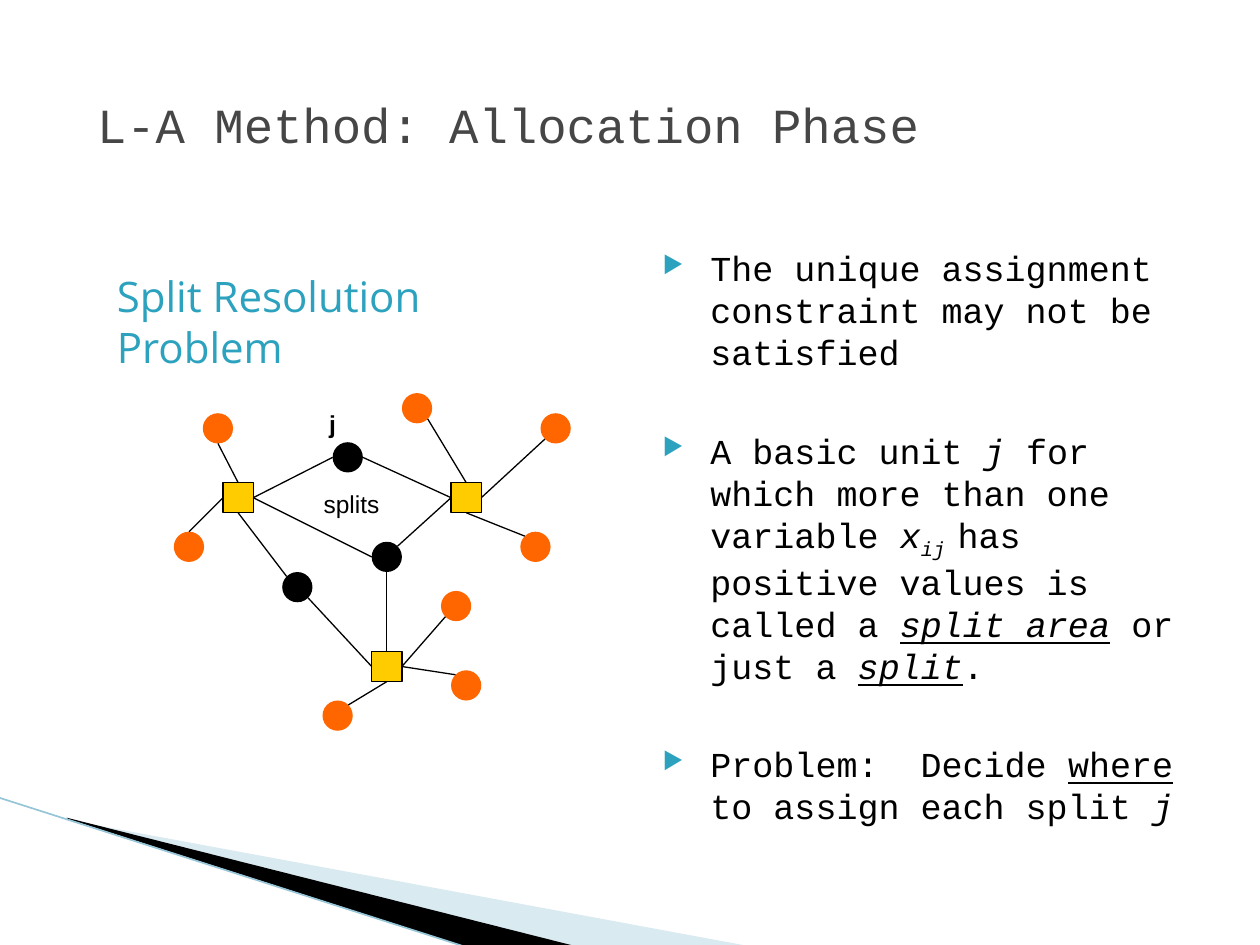
from dataclasses import dataclass
from math import sqrt

from lxml.etree import SubElement
from pptx import Presentation
from pptx.dml.color import RGBColor
from pptx.enum.shapes import MSO_CONNECTOR as Connector, MSO_SHAPE as Shape
from pptx.enum.text import MSO_ANCHOR as Anchor, PP_ALIGN as Align
from pptx.oxml.ns import qn
from pptx.util import Inches, Pt


@dataclass(frozen=True)
class Theme:
    black: str = "000000"
    title: str = "464646"
    accent: str = "2DA2BF"
    customer: str = "FF6600"
    center: str = "FFCC00"
    pale: str = "A0CBDC"
    edge: str = "97C5D8"
    mono: str = "Courier New"
    sans: str = "Arial"
    heading: str = "Open Sans"
    title_size: int = 28
    heading_size: int = 24
    body_size: int = 20
    label_size: int = 14


THEME = Theme()
NODE = 0.24
SPLIT_J, SPLIT_LOW, SPLIT_LEFT = (2.64, 3.51), (2.95, 4.3), (2.24, 4.54)
WEST, EAST, SOUTH = (1.77, 3.83), (3.58, 3.83), (2.95, 5.17)
NW, SW, N, NE, SE = (1.61, 3.28), (1.38, 4.22), (3.19, 3.12), (4.29, 3.28), (4.13, 4.22)
S_NE, S_E, S_SW = (3.5, 4.69), (3.58, 5.32), (2.56, 5.56)
CUSTOMERS = [NW, SW, N, NE, SE, S_NE, S_E, S_SW]
SPLITS = [SPLIT_J, SPLIT_LOW, SPLIT_LEFT]
CENTERS = [WEST, EAST, SOUTH]

# Center, side it leaves from, unit, side it arrives at
ASSIGNMENTS = [
    (WEST, "n", NW, "s"), (WEST, "w", SW, "n"),
    (WEST, "s", SPLIT_LEFT, "nw"), (WEST, "e", SPLIT_J, "w"),
    (WEST, "e", SPLIT_LOW, "w"),
    (EAST, "n", N, "se"), (EAST, "e", NE, "sw"), (EAST, "s", SE, "nw"),
    (EAST, "w", SPLIT_LOW, "ne"), (EAST, "w", SPLIT_J, "e"),
    (SOUTH, "w", SPLIT_LEFT, "se"), (SOUTH, "s", S_SW, "ne"),
    (SOUTH, "e", S_E, "nw"), (SOUTH, "e", S_NE, "sw"),
    (SOUTH, "n", SPLIT_LOW, "s"),
]

ITALIC = {"italic": True}
TERM = {"italic": True, "underline": True}
BULLETS = [
    [("The unique assignment constraint may not be satisfied", {})],
    [("A basic unit ", {}), ("j ", ITALIC),
     ("for which more than one variable ", {}), ("x", ITALIC),
     ("ij ", {"italic": True, "subscript": True}),
     ("has positive values is called a ", {}), ("split area", TERM),
     (" or just a ", {}), ("split", TERM), (".", {})],
    [("Problem:  Decide ", {}), ("where", {"underline": True}),
     (" to assign each split ", {}), ("j", ITALIC)],
]


def rgb(value):
    return RGBColor.from_string(value)


def style_font(font, name, size, color, **values):
    font.color.rgb = rgb(color)
    for key, value in {"name": name, "size": Pt(size), **values}.items():
        setattr(font, key, value)


def add_line(slide, start, end, color, width):
    line = slide.shapes.add_connector(
        Connector.STRAIGHT, *(Inches(v) for v in (*start, *end)))
    line.line.color.rgb = rgb(color)
    line.line.width = Pt(width)
    SubElement(line._element.spPr, qn("a:effectLst"))


def add_text_box(slide, box):
    frame = slide.shapes.add_textbox(*(Inches(v) for v in box)).text_frame
    frame.word_wrap = True
    return frame


def add_wedge(slide, points, color, alpha=None):
    start, *rest = [(Inches(x), Inches(y)) for x, y in points]
    builder = slide.shapes.build_freeform(*start)
    builder.add_line_segments(rest, close=True)
    wedge = builder.convert_to_shape()
    wedge.shadow.inherit = False
    wedge.line.fill.background()
    wedge.fill.solid()
    wedge.fill.fore_color.rgb = rgb(color)
    if alpha is not None:
        fill = wedge._element.spPr.find(qn("a:solidFill"))
        SubElement(fill[0], qn("a:alpha"), val=str(alpha * 1000))


def add_corner(slide):
    add_wedge(slide, [(0.55, 6.51), (5.95, 7.51), (4.56, 7.51), (0.55, 6.5)],
              THEME.pale, alpha=40)
    add_wedge(slide, [(0.53, 6.49), (4.57, 7.51), (3.72, 7.52), (0.54, 6.5)],
              THEME.black)
    add_line(slide, (-0.01, 6.33), (3.71, 7.52), THEME.edge, 0.95)


def add_title(slide, box):
    title = slide.shapes.title
    for side, value in zip(("left", "top", "width", "height"), box):
        setattr(title, side, Inches(value))
    frame = title.text_frame
    frame.text = "L-A Method: Allocation Phase"
    frame.vertical_anchor = Anchor.MIDDLE
    frame.paragraphs[0].alignment = Align.LEFT
    style_font(frame.paragraphs[0].runs[0].font, THEME.mono, THEME.title_size, THEME.title)


def add_bullet(paragraph):
    properties = paragraph._p.get_or_add_pPr()
    indent = Inches(0.38)
    properties.set("marL", str(indent))
    properties.set("indent", str(-indent))
    color = SubElement(properties, qn("a:buClr"))
    SubElement(color, qn("a:srgbClr"), val=THEME.accent)
    SubElement(properties, qn("a:buSzPct"), val="68000")
    SubElement(properties, qn("a:buChar"), char="▶")


def add_explanation(slide, box):
    frame = add_text_box(slide, box)
    frame.margin_top = Inches(0.1)
    for index, parts in enumerate(BULLETS):
        paragraph = frame.add_paragraph() if index else frame.paragraphs[0]
        add_bullet(paragraph)
        if index:
            paragraph.space_before = Pt(32)
        for text, emphasis in parts:
            run = paragraph.add_run()
            run.text = text
            values = dict(emphasis)
            subscript = values.pop("subscript", False)
            style_font(run.font, THEME.mono, THEME.body_size, THEME.black, **values)
            if subscript:
                run._r.get_or_add_rPr().set("baseline", "-25000")


def add_caption(slide, box, text, name, size, color, align=Align.LEFT, **values):
    frame = add_text_box(slide, box)
    frame.vertical_anchor = Anchor.MIDDLE if align == Align.CENTER else Anchor.TOP
    paragraph = frame.paragraphs[0]
    paragraph.alignment = align
    run = paragraph.add_run()
    run.text = text
    style_font(run.font, name, size, color, **values)


def add_node(slide, origin, preset, color, outlined=False):
    node = slide.shapes.add_shape(preset, *(Inches(v) for v in (*origin, NODE, NODE)))
    node.shadow.inherit = False
    node.fill.solid()
    node.fill.fore_color.rgb = rgb(color)
    if outlined:
        node.line.color.rgb = rgb(THEME.black)
        node.line.width = Pt(0.75)
    else:
        node.line.fill.background()


def side_point(origin, side):
    """Point on a node's rim in the given compass direction."""
    reach = NODE / 2 / sqrt(len(side))
    dx = ("e" in side) - ("w" in side)
    dy = ("s" in side) - ("n" in side)
    return origin[0] + NODE / 2 + dx * reach, origin[1] + NODE / 2 + dy * reach


def add_network(slide, box):
    """Draw the network, whose nodes are placed relative to the box's corner."""
    left, top = box[:2]

    def place(origin):
        return left + origin[0] - SW[0], top + origin[1] - N[1]

    for origins, preset, color, outlined in (
            (CUSTOMERS, Shape.OVAL, THEME.customer, False),
            (SPLITS, Shape.OVAL, THEME.black, False),
            (CENTERS, Shape.RECTANGLE, THEME.center, True)):
        for origin in origins:
            add_node(slide, place(origin), preset, color, outlined)
    for center, leaving, unit, arriving in ASSIGNMENTS:
        add_line(slide, side_point(place(center), leaving),
                 side_point(place(unit), arriving), THEME.black, 0.75)
    for text, dx, dy, bold in (("splits", 0.86, 0.71, False), ("j", 0.71, 0.08, True)):
        add_caption(slide, (left + dx, top + dy, 1.1, 0.33), text, THEME.sans,
                    THEME.label_size, THEME.black, Align.CENTER, bold=bold)


def main():
    deck = Presentation()
    deck.slide_width, deck.slide_height = Inches(10), Inches(7.5)
    slide = deck.slides.add_slide(deck.slide_layouts[5])
    add_corner(slide)
    add_title(slide, (0.67, 0.36, 8.36, 1.25))
    add_explanation(slide, (5.16, 1.86, 4.38, 4.95))
    add_network(slide, (1.38, 3.12, 3.15, 2.68))
    add_caption(slide, (0.83, 2.1, 3.86, 0.5), "Split Resolution Problem",
                THEME.heading, THEME.heading_size, THEME.accent)
    deck.save("out.pptx")


if __name__ == "__main__":
    main()
